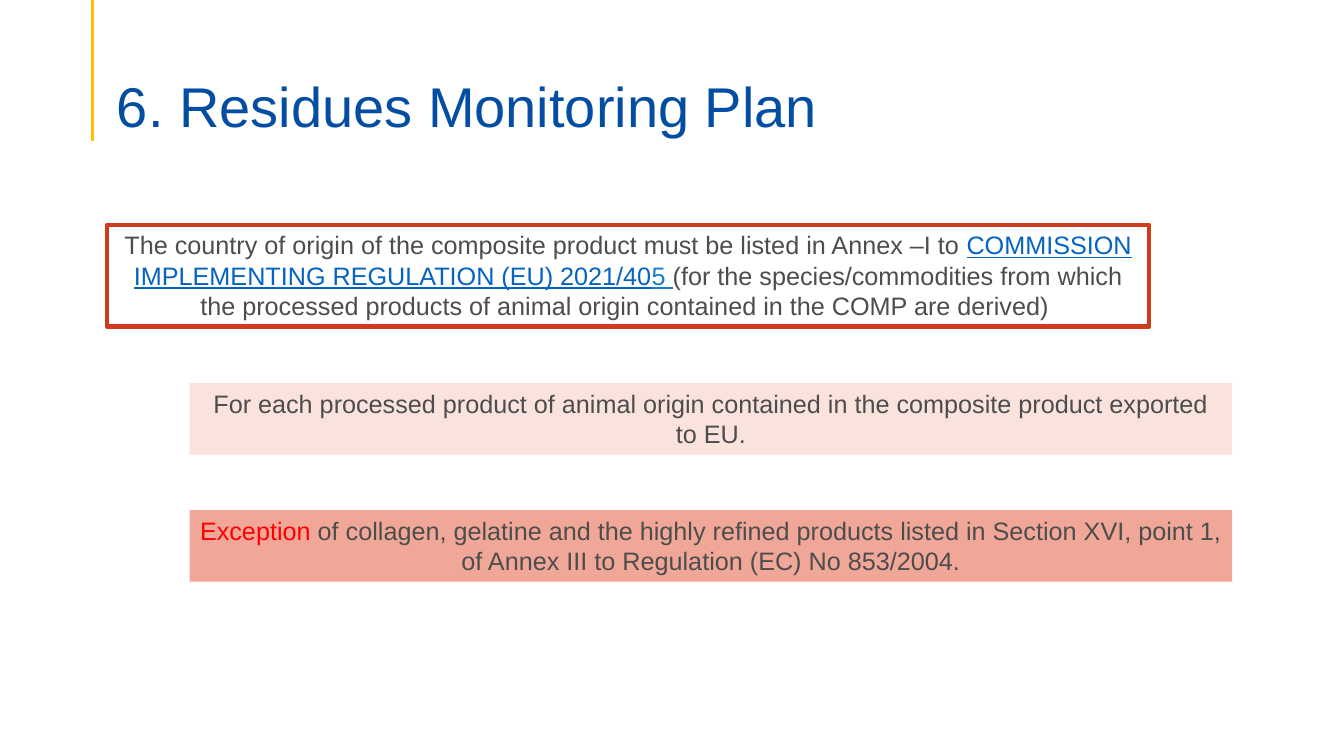
from dataclasses import dataclass
from lxml.etree import SubElement
from pptx import Presentation
from pptx.dml.color import RGBColor
from pptx.enum.shapes import MSO_CONNECTOR as CONN, MSO_SHAPE as SHAPE
from pptx.enum.text import MSO_ANCHOR as ANCHOR, MSO_AUTO_SIZE as FIT, PP_ALIGN as ALIGN
from pptx.oxml.ns import qn
from pptx.util import Inches, Pt


@dataclass(frozen=True)
class Theme:
    font: str = "Arial"
    title_size: int = 40
    body_size: int = 18
    title: str = "034EA2"
    text: str = "4D4D4D"
    link: str = "0563C1"
    link_end: str = "1C7CCA"
    alert: str = "FF0000"
    accent: str = "FFC000"
    border: str = "CF3B1D"
    pale: str = "FAE2DD"
    salmon: str = "F1A798"


def add_run(p, text, size, color, underline=None):
    r = p.add_run()
    r.text = text
    r.font.name = T.font
    r.font.size = Pt(size)
    r.font.underline = underline
    r.font.color.rgb = RGBColor.from_string(color)


T = Theme()
prs = Presentation()
prs.slide_width, prs.slide_height = Inches(13.33), Inches(7.5)
s = prs.slides.add_slide(prs.slide_layouts[5])

left, indent, box_w = Inches(1.06), Inches(0.82), Inches(10.34)

rule = s.shapes.add_connector(CONN.STRAIGHT, Inches(0.92), 0, Inches(0.92), Inches(1.4))
rule.line.color.rgb = RGBColor.from_string(T.accent)
rule.line.width = Pt(2.25)
SubElement(rule._element.spPr, qn("a:effectLst"))

title = s.shapes.title
title.left, title.top, title.width, title.height = left, Inches(0.53), Inches(11.5), Inches(0.86)
tf = title.text_frame
tf.word_wrap = True
tf.auto_size = FIT.NONE
tf.vertical_anchor = ANCHOR.BOTTOM
tf.margin_bottom = 0
p = tf.paragraphs[0]
p.alignment = ALIGN.LEFT
p.line_spacing = 0.9
add_run(p, "6. Residues Monitoring Plan", T.title_size, T.title)

boxes = [
    (0, 2.23, 1.01, None, T.border, [
        ("The country of origin of the composite product must be listed in Annex –I to ", T.text, None),
        ("COMMISSION IMPLEMENTING REGULATION (EU) 2021/40", T.link, True),
        ("5 ", T.link_end, True),
        ("(for the species/commodities from which the processed products of animal origin "
         "contained in the COMP are derived) ", T.text, None),
    ]),
    (1, 3.8, 0.71, T.pale, None, [
        ("For each processed product of animal origin contained in the composite product "
         "exported to EU.", T.text, None),
    ]),
    (1, 5.06, 0.71, T.salmon, None, [
        ("Exception", T.alert, None),
        (" of collagen, gelatine and the highly refined products listed in Section XVI, point 1, "
         "of Annex III to Regulation (EC) No 853/2004.", T.text, None),
    ]),
]

for level, top, height, fill, border, runs in boxes:
    sp = s.shapes.add_shape(SHAPE.RECTANGLE, left + level * indent, Inches(top), box_w, Inches(height))
    sp.shadow.inherit = False
    if fill:
        sp.fill.solid()
        sp.fill.fore_color.rgb = RGBColor.from_string(fill)
    else:
        sp.fill.background()
    if border:
        sp.line.color.rgb = RGBColor.from_string(border)
        sp.line.width = Pt(3)
    else:
        sp.line.fill.background()
    tf = sp.text_frame
    tf.word_wrap = True
    tf.auto_size = FIT.SHAPE_TO_FIT_TEXT
    tf.vertical_anchor = ANCHOR.TOP
    p = tf.paragraphs[0]
    p.alignment = ALIGN.CENTER
    for text, color, underline in runs:
        add_run(p, text, T.body_size, color, underline)

prs.save("out.pptx")
